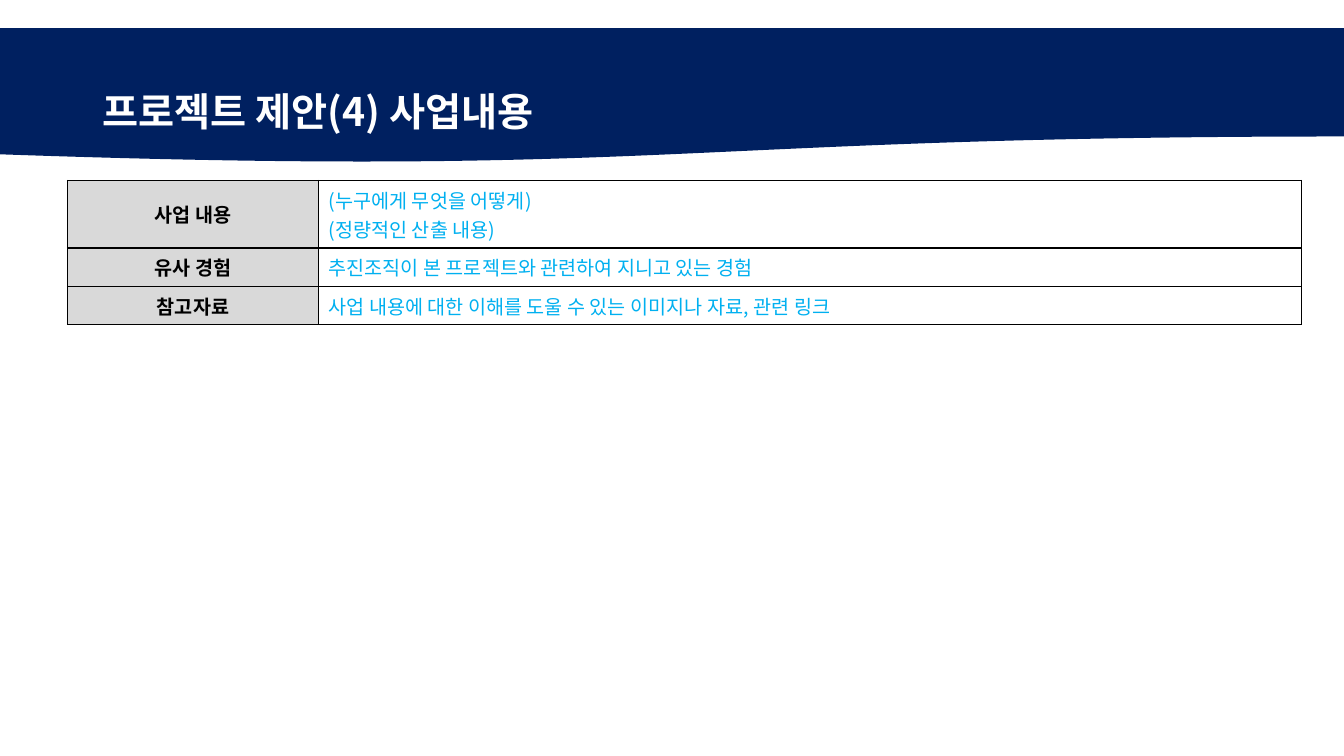
import pptx
import pptx.dml.color
import pptx.enum.shapes
import pptx.enum.text
import pptx.oxml.ns
import pptx.util
from lxml import etree

WIDTH, HEIGHT = 13.33, 7.5
FONT = "Noto Sans CJK KR"
NAVY, GREY, BLUE, BLACK, WHITE = "002060", "D9D9D9", "00B0F0", "000000", "FFFFFF"
ALIGN = pptx.enum.text.PP_ALIGN
ROWS = [
    ("사업 내용", "(누구에게 무엇을 어떻게)\n(정량적인 산출 내용)", 0.67),
    ("유사 경험", "추진조직이 본 프로젝트와 관련하여 지니고 있는 경험", 0.38),
    ("참고자료", "사업 내용에 대한 이해를 도울 수 있는 이미지나 자료, 관련 링크", 0.38),
]


def color(hex_value):
    """Return the RGB colour of a hex string."""
    return pptx.dml.color.RGBColor.from_string(hex_value)


def inches(*lengths):
    """Convert lengths in inches to slide units."""
    return [pptx.util.Inches(length) for length in lengths]


def write(frame, text, size=14, ink=BLACK, bold=False, align=ALIGN.LEFT, spacing=1.0):
    """Fill a text frame with one paragraph per line of text."""
    frame.word_wrap = True
    for number, line in enumerate(text.split("\n")):
        paragraph = frame.add_paragraph() if number else frame.paragraphs[0]
        paragraph.alignment = align
        paragraph.line_spacing = spacing
        run = paragraph.add_run()
        run.text = line
        run.font.size = pptx.util.Pt(size)
        run.font.bold = bold
        run.font.name = FONT
        run.font.color.rgb = color(ink)
        east_asian = etree.SubElement(run.font._element, pptx.oxml.ns.qn("a:ea"))
        east_asian.set("typeface", FONT)


def outline(cell, ink=BLACK, points=1):
    """Draw a solid border on all four sides of a cell."""
    properties = cell._tc.get_or_add_tcPr()
    for side in ("lnL", "lnR", "lnT", "lnB"):
        border = etree.SubElement(properties, pptx.oxml.ns.qn(f"a:{side}"))
        border.set("w", str(pptx.util.Pt(points)))
        fill = etree.SubElement(border, pptx.oxml.ns.qn("a:solidFill"))
        etree.SubElement(fill, pptx.oxml.ns.qn("a:srgbClr")).set("val", ink)


def add_header(slide, left, top, width, height, title):
    """Place the wavy banner in its box with the slide title on it."""
    banner = slide.shapes.add_shape(
        pptx.enum.shapes.MSO_SHAPE.FLOWCHART_DOCUMENT, *inches(left, top, width, height))
    banner.shadow.inherit = False
    banner.fill.solid()
    banner.fill.fore_color.rgb = color(NAVY)
    banner.line.fill.background()
    heading = slide.shapes.add_textbox(
        *inches(left + 0.92, top + 0.12, width - 1.83, 1.45))
    heading.text_frame.vertical_anchor = pptx.enum.text.MSO_ANCHOR.MIDDLE
    write(heading.text_frame, title, size=28, ink=WHITE, bold=True, spacing=0.9)


def add_proposal_table(slide, left, top, width, rows, label_width):
    """Place the table of proposal items, with a shaded label column."""
    height = sum(row_height for _, _, row_height in rows)
    table = slide.shapes.add_table(
        len(rows), 2, *inches(left, top, width, height)).table
    table.first_row = table.horz_banding = False
    for column, length in zip(table.columns, inches(label_width, width - label_width)):
        column.width = length
    for row, (label, content, row_height) in zip(table.rows, rows):
        row.height = pptx.util.Inches(row_height)
        label_cell, content_cell = row.cells
        for cell in row.cells:
            cell.vertical_anchor = pptx.enum.text.MSO_ANCHOR.MIDDLE
            outline(cell)
        label_cell.fill.solid()
        label_cell.fill.fore_color.rgb = color(GREY)
        content_cell.fill.background()
        write(label_cell.text_frame, label, bold=True, align=ALIGN.CENTER)
        write(content_cell.text_frame, content, ink=BLUE)


def main():
    """Build the proposal slide and save it."""
    deck = pptx.Presentation()
    deck.slide_width, deck.slide_height = inches(WIDTH, HEIGHT)
    slide = deck.slides.add_slide(deck.slide_layouts[6])
    add_header(slide, 0, 0.28, WIDTH, 1.34, "프로젝트 제안(4) 사업내용")
    add_proposal_table(slide, 0.67, 1.79, 12.24, ROWS, 2.49)
    deck.save("out.pptx")


if __name__ == "__main__":
    main()
